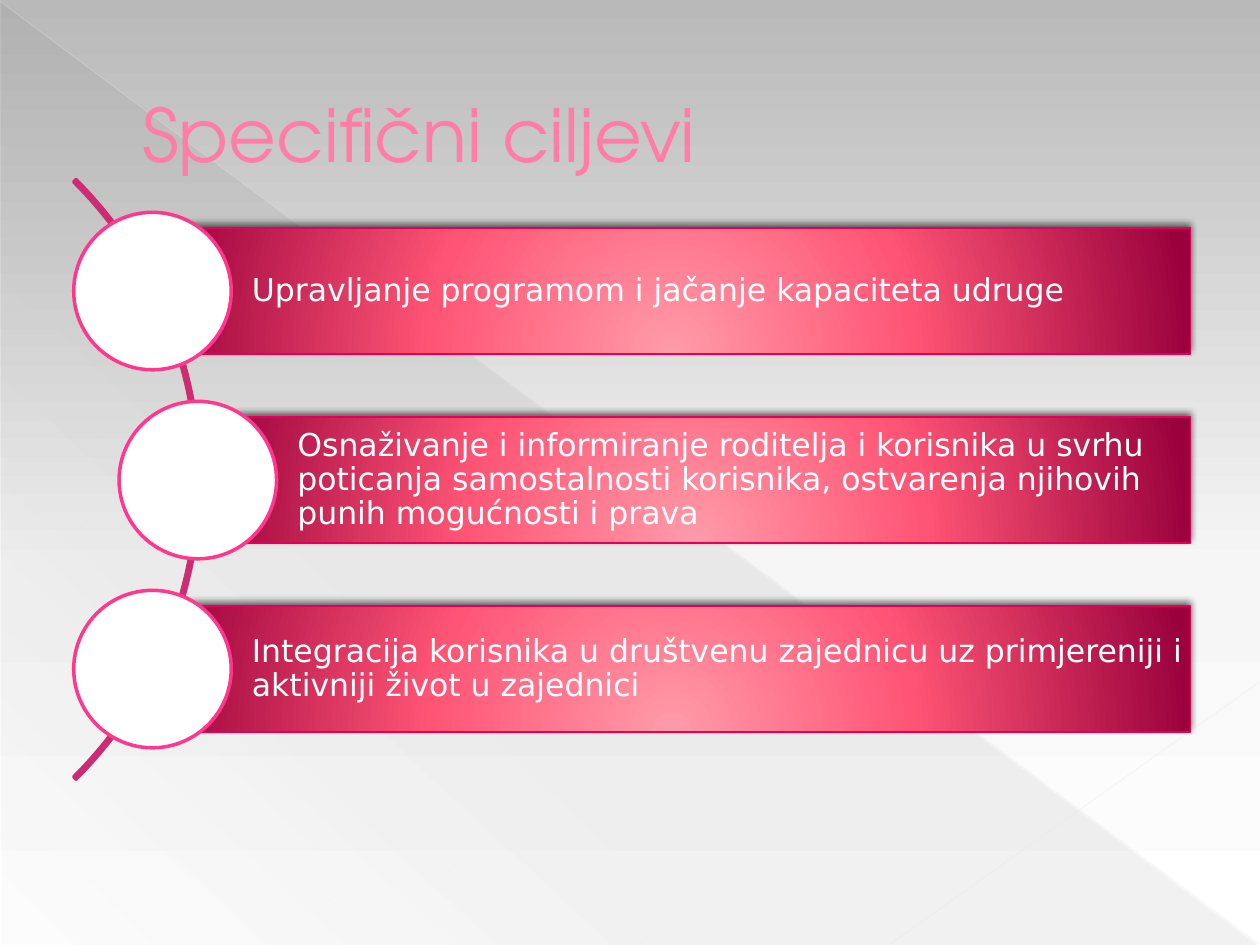
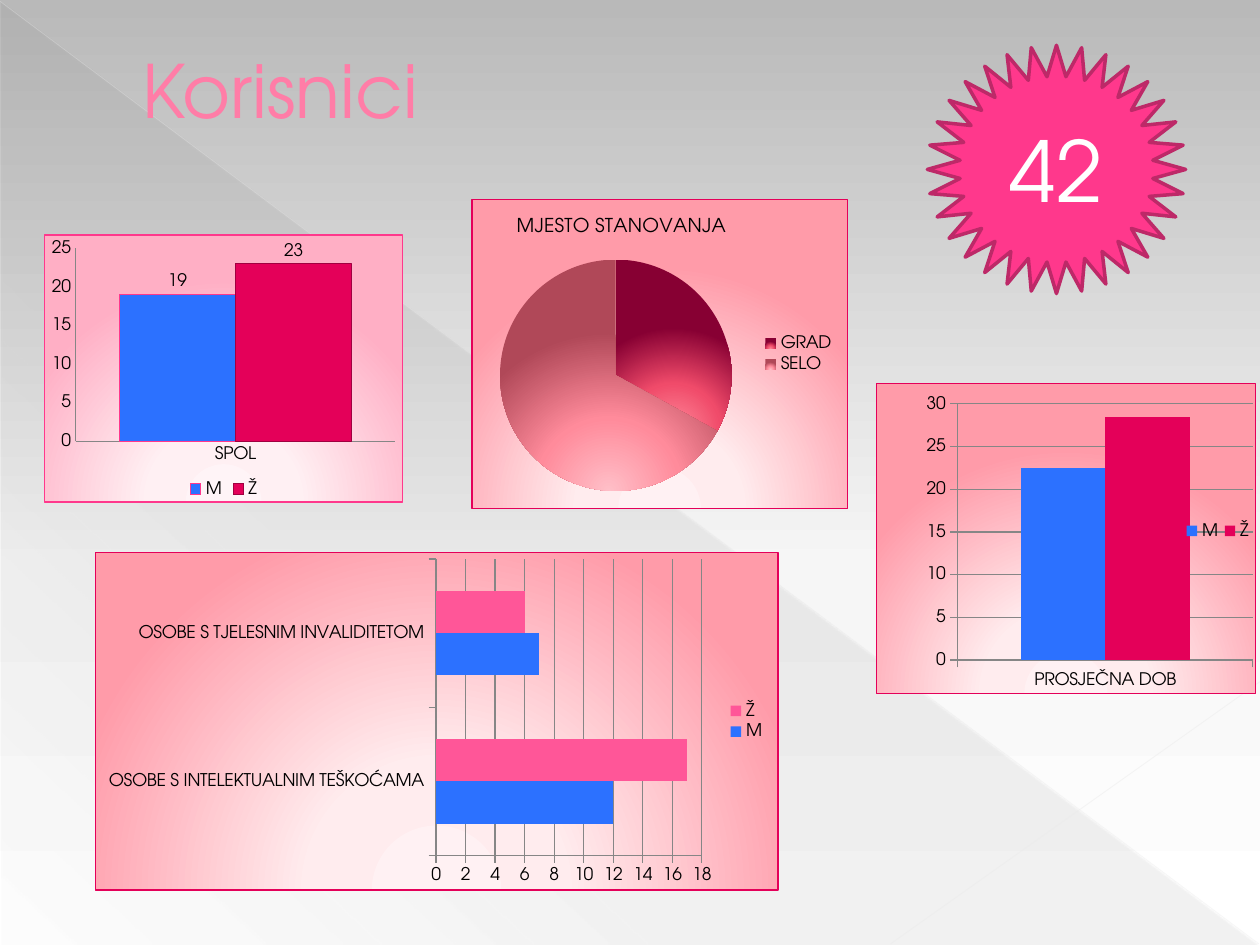
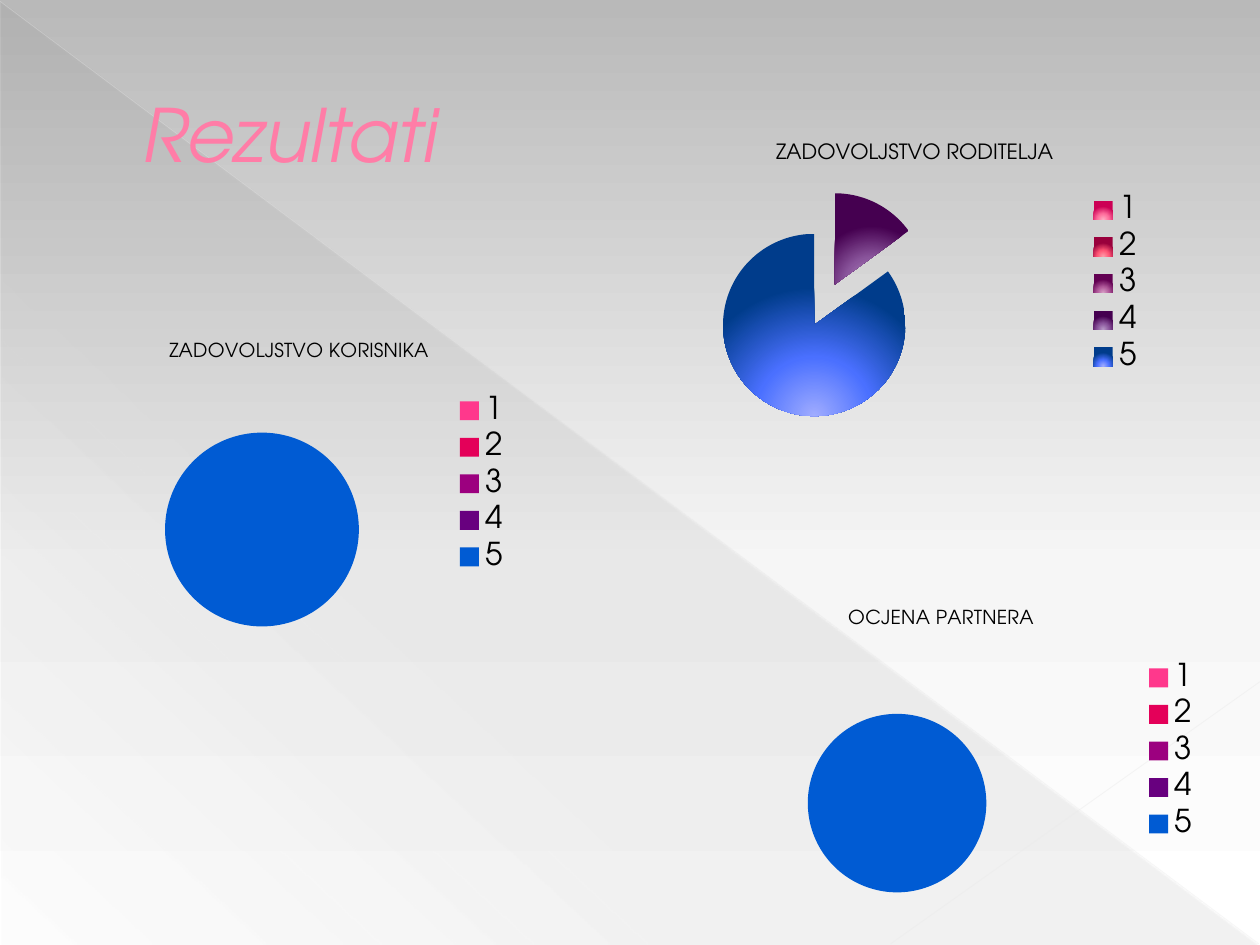
from dataclasses import dataclass

from pptx import Presentation
from pptx.chart.data import CategoryChartData
from pptx.dml.color import RGBColor as RGB
from pptx.enum.chart import XL_CHART_TYPE as CHART, XL_LABEL_POSITION as LABEL
from pptx.enum.chart import XL_LEGEND_POSITION as LEGEND, XL_TICK_MARK as TICK
from pptx.enum.shapes import MSO_CONNECTOR as CONNECTOR, MSO_SHAPE as SHAPE
from pptx.enum.text import MSO_ANCHOR as ANCHOR, PP_ALIGN as ALIGN
from pptx.oxml import parse_xml
from pptx.oxml.ns import nsdecls, qn
from pptx.util import Inches, Pt


@dataclass(frozen=True)
class Theme:
    title_font: str = "TeX Gyre Adventor"
    body_font: str = "DejaVu Sans"
    title_size: int = 42
    body_size: int = 18
    badge_size: int = 48
    title: str = "FF7DA7"
    title_outline: str = "B12761"
    white: str = "FFFFFF"
    black: str = "000000"
    pink: str = "FF388C"
    rose: str = "FF5698"
    crimson: str = "E40059"
    wine: str = "A00040"
    arc: str = "CC2D70"
    badge_line: str = "BD2968"
    blue: str = "2C71FF"
    axis: str = "868686"
    # Gradient stops are position, colour and, where needed, opacity in percent.
    background: tuple = ((0, "B9B9B9"), (60, "F6F6F6"), (100, "FFFFFF"))
    veil: tuple = ((0, "666666", 10), (70, "666666", 8), (100, "666666", 1))
    bar: tuple = ((0, "FF9BA9"), (46, "FF5575"), (100, "99003C"))
    chart_red: tuple = ((0, "FFF1F3"), (34, "FFECEE"), (100, "FF9BA9"))
    chart_pink: tuple = ((0, "FFF4F7"), (34, "FFF0F3"), (100, "FFAFC5"))
    town_slices: tuple = (
        ((0, "FF8A9A"), (46, "F04B6A"), (100, "870033")),
        ((0, "FFBFC8"), (46, "FF8B9B"), (100, "B04858")),
    )
    grades: tuple = ("FF388C", "E40059", "9C007F", "68007F", "005BD3")
    shaded_grades: tuple = (
        ((0, "FFAFC5"), (46, "FF6C9C"), (100, "CC0055")),
        ((0, "FF9BA9"), (46, "FF5575"), (100, "99003C")),
        ((0, "D9A0C8"), (46, "B0589A"), (100, "620052")),
        ((0, "B898C8"), (46, "8A559C"), (100, "450050")),
        ((0, "A0ACFF"), (46, "4A70FF"), (100, "003C8B")),
    )


THEME = Theme()


def paint_gradient(properties, stops, angle=None):
    """Replace a solid fill by a linear gradient, or by a glow from below if no angle is given."""
    stop_xml = ""
    for position, color, *opacity in stops:
        alpha = f'<a:alpha val="{opacity[0] * 1000}"/>' if opacity else ""
        stop_xml += f'<a:gs pos="{position * 1000}"><a:srgbClr val="{color}">{alpha}</a:srgbClr></a:gs>'
    if angle is None:
        direction = ('<a:path path="circle"><a:fillToRect l="50000" t="155000" '
                     'r="50000" b="-55000"/></a:path>')
    else:
        direction = f'<a:lin ang="{angle * 60000}" scaled="0"/>'
    gradient = parse_xml(f'<a:gradFill {nsdecls("a")} rotWithShape="1">'
                         f'<a:gsLst>{stop_xml}</a:gsLst>{direction}</a:gradFill>')
    properties.replace(properties.find(qn("a:solidFill")), gradient)


def place_in_chart(part, index, box, target=""):
    """Give a chart part a manual layout; box holds x, y and optionally width and height."""
    for layout in part.findall(qn("c:layout")):
        part.remove(layout)
    values = "".join(f'<c:{name} val="{value}"/>' for name, value in zip("xywh", box))
    part.insert(index, parse_xml(
        f'<c:layout {nsdecls("c")}><c:manualLayout>{target}<c:xMode val="edge"/>'
        f'<c:yMode val="edge"/>{values}</c:manualLayout></c:layout>'))


presentation = Presentation()
presentation.slide_width, presentation.slide_height = Inches(10), Inches(7.5)

# Shared background and titles
titles = [  # text, italic, bottom margin
    ("Specifični ciljevi", False, 0.05),
    ("Korisnici", False, 0.75),
    ("Rezultati", True, 0.05),
]
diagonals = [  # from, to, colour, width, opacity
    ((0, 0.01), (9.99, 7.49), "E8E8E8", 0.39, 35),
    ((10, 5.41), (7.07, 7.49), "EAEAEA", 0.47, 45),
]
for title, italic, bottom_margin in titles:
    slide = presentation.slides.add_slide(presentation.slide_layouts[6])
    slide.background.fill.solid()
    paint_gradient(slide._element.find(".//" + qn("p:bgPr")), THEME.background, 90)

    veil = slide.shapes.add_shape(SHAPE.RIGHT_TRIANGLE, Inches(0.01), Inches(0.02),
                                  Inches(9.98), Inches(7.48))
    veil.shadow.inherit = False
    veil.line.fill.background()
    veil.fill.solid()
    paint_gradient(veil._element.spPr, THEME.veil, 133)

    for start, end, color, width, opacity in diagonals:
        diagonal = slide.shapes.add_connector(
            CONNECTOR.STRAIGHT, *[Inches(value) for value in start + end])
        diagonal.line.width = Pt(width)
        diagonal.line.color.rgb = RGB.from_string(color)
        properties = diagonal._element.spPr
        properties.find(".//" + qn("a:srgbClr")).append(
            parse_xml(f'<a:alpha {nsdecls("a")} val="{opacity * 1000}"/>'))
        properties.append(parse_xml(f'<a:effectLst {nsdecls("a")}/>'))

    title_box = slide.shapes.add_textbox(Inches(0.5), Inches(0.29), Inches(9), Inches(1.53))
    frame = title_box.text_frame
    frame.word_wrap = True
    frame.vertical_anchor = ANCHOR.MIDDLE
    frame.margin_left = Inches(0.63)
    frame.margin_bottom = Inches(bottom_margin)
    run = frame.paragraphs[0].add_run()
    run.text = title
    run.font.name, run.font.size = THEME.title_font, Pt(THEME.title_size)
    run.font.italic = italic
    run.font.color.rgb = RGB.from_string(THEME.title)
    run.font._element.insert(0, parse_xml(
        f'<a:ln {nsdecls("a")} w="6350"><a:solidFill><a:srgbClr val="{THEME.title_outline}"/>'
        '</a:solidFill></a:ln>'))

goals_slide, users_slide, results_slide = presentation.slides

# Goals: an arc with three circles, each with a bar
arc = goals_slide.shapes.add_shape(SHAPE.BLOCK_ARC, Inches(-5.14), Inches(0.44),
                                   Inches(6.73), Inches(6.73))
for index, adjustment in enumerate((189, 27, 0.004)):
    arc.adjustments[index] = adjustment
arc.shadow.inherit = False
arc.fill.background()
arc.line.color.rgb = RGB.from_string(THEME.arc)
arc.line.width = Pt(2)

bar_right, circle_size = 9.45, 1.25
goals = [  # left edge of the bar, text
    (1.21, "Upravljanje programom i jačanje kapaciteta udruge"),
    (1.57, "Osnaživanje i informiranje roditelja i korisnika u svrhu poticanja "
           "samostalnosti korisnika, ostvarenja njihovih punih mogućnosti i prava"),
    (1.21, "Integracija korisnika u društvenu zajednicu uz primjereniji i "
           "aktivniji život u zajednici"),
]
for index, (left, goal) in enumerate(goals):
    top = 1.81 + 1.5 * index
    bar = goals_slide.shapes.add_shape(SHAPE.RECTANGLE, Inches(left), Inches(top),
                                       Inches(bar_right - left), Inches(1))
    bar.fill.solid()
    paint_gradient(bar._element.spPr, THEME.bar)
    bar.line.color.rgb = RGB.from_string(THEME.crimson)
    bar.line.width = Pt(0.75)
    bar.shadow.inherit = False
    bar._element.spPr.find(qn("a:effectLst")).append(parse_xml(
        f'<a:outerShdw {nsdecls("a")} blurRad="{Pt(4)}" dist="{Pt(3)}" dir="{245 * 60000}" '
        f'rotWithShape="0"><a:srgbClr val="{THEME.black}"><a:alpha val="60000"/></a:srgbClr>'
        '</a:outerShdw>'))
    frame = bar.text_frame
    frame.word_wrap = True
    frame.vertical_anchor = ANCHOR.MIDDLE
    frame.margin_left = Inches(0.79)
    frame.margin_right = Inches(0.05)
    paragraph = frame.paragraphs[0]
    paragraph.alignment = ALIGN.LEFT
    paragraph.line_spacing = 0.9
    run = paragraph.add_run()
    run.text = goal
    run.font.name, run.font.size = THEME.body_font, Pt(THEME.body_size)
    run.font.color.rgb = RGB.from_string(THEME.white)

    circle = goals_slide.shapes.add_shape(
        SHAPE.OVAL, Inches(left - circle_size / 2), Inches(top + 0.5 - circle_size / 2),
        Inches(circle_size), Inches(circle_size))
    circle.shadow.inherit = False
    circle.fill.solid()
    circle.fill.fore_color.rgb = RGB.from_string(THEME.white)
    circle.line.color.rgb = RGB.from_string(THEME.pink)
    circle.line.width = Pt(2)

# Users: total in a star
star = users_slide.shapes.add_shape(SHAPE.STAR_32_POINT, Inches(7.36), Inches(0.36),
                                    Inches(2.05), Inches(1.97))
star.shadow.inherit = False
star.fill.solid()
star.fill.fore_color.rgb = RGB.from_string(THEME.pink)
star.line.color.rgb = RGB.from_string(THEME.badge_line)
star.line.width = Pt(2)
star.text_frame.vertical_anchor = ANCHOR.MIDDLE
paragraph = star.text_frame.paragraphs[0]
paragraph.alignment = ALIGN.CENTER
run = paragraph.add_run()
run.text = "42"
run.font.name, run.font.size = THEME.title_font, Pt(THEME.badge_size)
run.font.color.rgb = RGB.from_string(THEME.white)

# Charts of both slides
satisfaction = dict(slide=results_slide, kind=CHART.PIE, size=18, title_size=11, explosion=25,
                    categories=("1", "2", "3", "4", "5"), colors=THEME.grades)
framed = dict(slide=users_slide, size=10, fill=THEME.chart_red, border=THEME.crimson)
charts = [
    dict(framed, kind=CHART.PIE, box=(3.74, 1.58, 2.99, 2.46), categories=("GRAD", "SELO"),
         title="MJESTO STANOVANJA", title_size=11, title_place=(0.11, 0.04),
         series={"MJESTO STANOVANJA": (33, 67)}, colors=THEME.town_slices),
    dict(framed, kind=CHART.COLUMN_CLUSTERED, box=(0.35, 1.86, 2.85, 2.13),
         categories=("SPOL",), series={"M": (19,), "Ž": (23,)}, gap=75,
         colors=(THEME.blue, THEME.crimson), outlines=(THEME.pink, THEME.wine),
         fill=THEME.chart_pink, border=THEME.pink, legend=LEGEND.BOTTOM,
         labels=True, tick=TICK.NONE, grid=False),
    dict(framed, kind=CHART.COLUMN_CLUSTERED, box=(6.95, 3.04, 3.02, 2.47),
         categories=("PROSJEČNA DOB",), series={"M": (22.5,), "Ž": (28.4,)},
         colors=(THEME.blue, THEME.crimson), plot=(0.215, 0.065, 0.778, 0.827),
         legend_place=(0.8, 0.39, 0.2, 0.17)),
    dict(framed, kind=CHART.BAR_CLUSTERED, box=(0.75, 4.38, 5.43, 2.69),
         categories=("OSOBE S INTELEKTUALNIM TEŠKOĆAMA", "OSOBE S TJELESNIM INVALIDITETOM"),
         series={"M": (12, 7), "Ž": (17, 6)}, colors=(THEME.blue, THEME.rose)),
    dict(satisfaction, box=(4.69, 0.99, 4.5, 2.52), title="ZADOVOLJSTVO RODITELJA",
         title_size=12, title_place=(0.32, 0.04), series={"Series 1": (0, 0, 0, 15, 85)},
         colors=THEME.shaded_grades, plot=(0.211, 0.197, 0.402, 0.74)),
    dict(satisfaction, box=(0.59, 2.57, 3.57, 2.54), title="ZADOVOLJSTVO KORISNIKA",
         series={"ZADOVOLJSTVO KORISNIKA": (0, 0, 0, 0, 100)}),
    dict(satisfaction, box=(5.31, 4.69, 4.32, 2.54), title="OCJENA PARTNERA",
         series={"OCJENA PARTNERA": (0, 0, 0, 0, 100)}, plot=(0.214, 0.241, 0.41, 0.705)),
]
for settings in charts:
    data = CategoryChartData()
    data.categories = settings["categories"]
    for name, values in settings["series"].items():
        data.add_series(name, values)
    chart = settings["slide"].shapes.add_chart(
        settings["kind"], *[Inches(value) for value in settings["box"]], data).chart
    chart.font.name, chart.font.size = THEME.title_font, Pt(settings["size"])
    chart.font.color.rgb = RGB.from_string(THEME.black)
    plot = chart.plots[0]
    is_pie = settings["kind"] == CHART.PIE
    plot.vary_by_categories = is_pie

    chart.has_legend = True
    chart.legend.position = settings.get("legend", LEGEND.RIGHT)
    chart.legend.include_in_layout = False
    if "legend_place" in settings:
        place_in_chart(chart.legend._element, 1, settings["legend_place"])

    chart.has_title = "title" in settings
    if chart.has_title:
        run = chart.chart_title.text_frame.paragraphs[0].add_run()
        run.text = settings["title"]
        run.font.name, run.font.size = THEME.title_font, Pt(settings["title_size"])
        run.font.bold = False
        run.font.color.rgb = RGB.from_string(THEME.black)
        if "title_place" in settings:
            place_in_chart(chart.chart_title._element, 1, settings["title_place"])

    # Chart area and plot area
    chart_element = chart._chartSpace.find(qn("c:chart"))
    plot_area = chart_element.find(qn("c:plotArea"))
    empty_area = (f'<c:spPr {nsdecls("c", "a")}><a:noFill/>'
                  '<a:ln><a:noFill/></a:ln></c:spPr>')
    plot_area.append(parse_xml(empty_area))
    if "plot" in settings:
        place_in_chart(plot_area, 0, settings["plot"], '<c:layoutTarget val="inner"/>')
    if "fill" in settings:
        area = parse_xml(
            f'<c:spPr {nsdecls("c", "a")}><a:solidFill/><a:ln w="9525"><a:solidFill>'
            f'<a:srgbClr val="{settings["border"]}"/></a:solidFill></a:ln></c:spPr>')
        paint_gradient(area, settings["fill"])
    else:
        area = parse_xml(empty_area)
    chart_element.addnext(area)

    if is_pie:
        series = plot.series[0]
        if "explosion" in settings:
            series._element.find(qn("c:cat")).addprevious(parse_xml(
                f'<c:explosion {nsdecls("c")} val="{settings["explosion"]}"/>'))
        for index, color in enumerate(settings["colors"]):
            fill = series.points[index].format.fill
            fill.solid()
            if isinstance(color, str):
                fill.fore_color.rgb = RGB.from_string(color)
            else:
                point = series._element.findall(qn("c:dPt"))[index]
                paint_gradient(point.find(qn("c:spPr")), color)
        continue

    plot.gap_width = settings.get("gap", 150)
    for index, series in enumerate(plot.series):
        series.format.fill.solid()
        series.format.fill.fore_color.rgb = RGB.from_string(settings["colors"][index])
        if "outlines" in settings:
            series.format.line.color.rgb = RGB.from_string(settings["outlines"][index])
            series.format.line.width = Pt(0.75)
    if settings.get("labels"):
        plot.has_data_labels = True
        plot.data_labels.show_value = True
        plot.data_labels.position = LABEL.OUTSIDE_END
    for axis in (chart.category_axis, chart.value_axis):
        axis.major_tick_mark = settings.get("tick", TICK.OUTSIDE)
        axis.minor_tick_mark = TICK.NONE
        axis.format.line.color.rgb = RGB.from_string(THEME.axis)
        axis.format.line.width = Pt(0.75)
    chart.value_axis.has_major_gridlines = settings.get("grid", True)
    if chart.value_axis.has_major_gridlines:
        grid_line = chart.value_axis.major_gridlines.format.line
        grid_line.color.rgb = RGB.from_string(THEME.axis)
        grid_line.width = Pt(0.75)

presentation.save("out.pptx")
